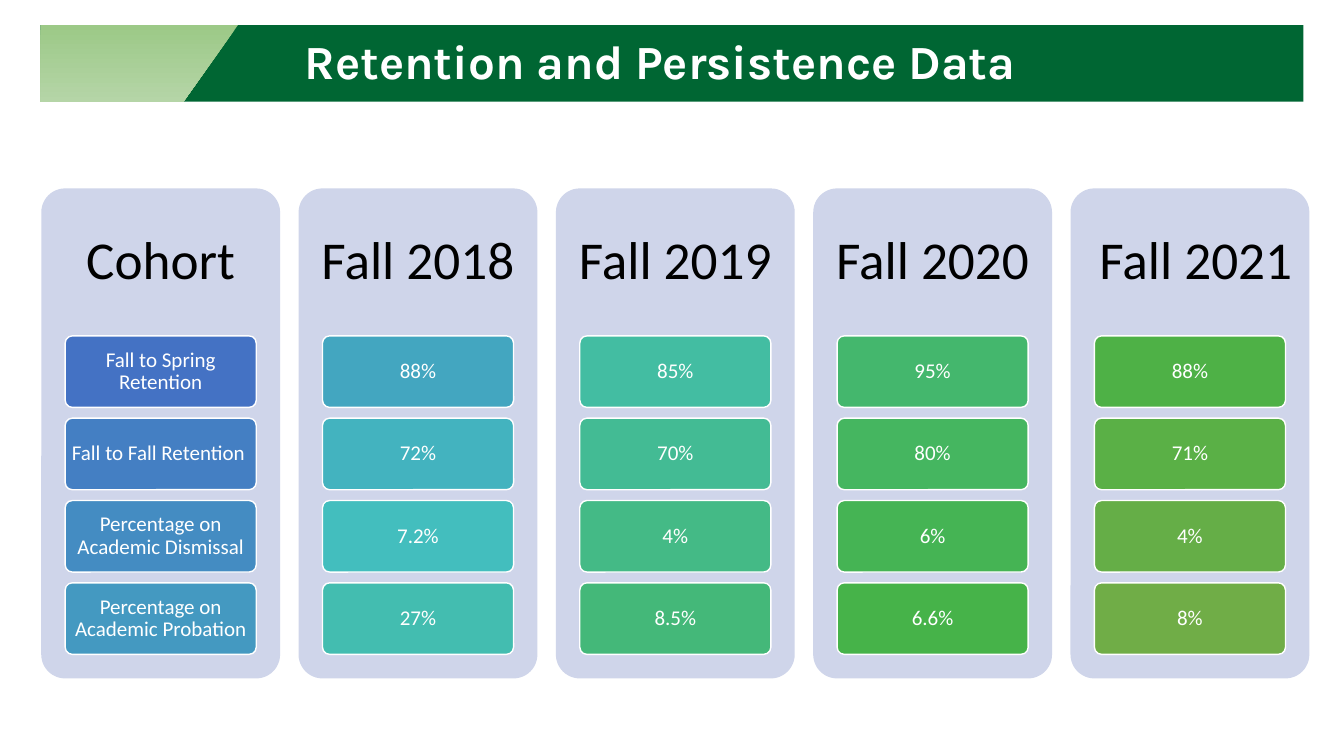
"""Build the retention and persistence slide with one panel per cohort."""
from colorsys import hls_to_rgb, rgb_to_hls

from pptx import Presentation
from pptx.dml.color import RGBColor
from pptx.enum.shapes import MSO_SHAPE as Preset
from pptx.enum.text import MSO_ANCHOR as Anchor, PP_ALIGN as Align
from pptx.util import Pt

WHITE = RGBColor(0xFF, 0xFF, 0xFF)
BLACK = RGBColor(0x00, 0x00, 0x00)
BAND_GREEN = RGBColor(0x00, 0x66, 0x33)
CORNER_TOP = RGBColor(0x9C, 0xC9, 0x87)
CORNER_BOTTOM = RGBColor(0xB5, 0xD5, 0xA7)
PANEL = RGBColor(0xCF, 0xD5, 0xEA)
FIRST_CELL = RGBColor(0x44, 0x72, 0xC4)
LAST_CELL = RGBColor(0x70, 0xAD, 0x47)

COHORTS = [
    ("Cohort", ["Fall to Spring Retention", "Fall to Fall Retention ",
                "Percentage on Academic Dismissal", "Percentage on Academic Probation"]),
    ("Fall 2018", ["88%", "72%", "7.2%", "27%"]),
    ("Fall 2019", ["85%", "70%", "4%", "8.5%"]),
    ("Fall 2020", ["95%", "80%", "6%", "6.6%"]),
    (" Fall 2021", ["88%", "71%", "4%", "8%"]),
]
ROWS = 4
PANEL_LEFT, PANEL_TOP, PANEL_WIDTH, PANEL_HEIGHT, PANEL_STEP = 29.5, 134.6, 170.6, 350, 183.8
CELL_TOP, CELL_WIDTH, CELL_HEIGHT, CELL_STEP = 239.9, 136.5, 51.1, 58.8
HEADER_HEIGHT = 105


def blend(share):
    """Return the cell colour at a share of the way along the hue range."""
    start, end = (rgb_to_hls(*(part / 255 for part in color)) for color in (FIRST_CELL, LAST_CELL))
    mixed = hls_to_rgb(*(a + (b - a) * share for a, b in zip(start, end)))
    return RGBColor(*(round(part * 255) for part in mixed))


class SlideBuilder:
    """Hold the text style and the current page."""

    font = "Calibri"

    def __init__(self, page):
        self.page = page

    def label(self, box, text, size, color, insets=(7.2, 3.6, 7.2, 3.6), **font):
        """Put one centred paragraph into a box."""
        frame = box.text_frame
        left, top, right, bottom = map(Pt, insets)
        layout = {"word_wrap": True, "vertical_anchor": Anchor.MIDDLE, "margin_left": left,
                  "margin_top": top, "margin_right": right, "margin_bottom": bottom}
        for name, value in layout.items():
            setattr(frame, name, value)
        para = frame.paragraphs[0]
        para.alignment, para.line_spacing = Align.CENTER, 0.9
        span = para.add_run()
        span.text = text
        span.font.color.rgb = color
        for name, value in {"name": self.font, "size": Pt(size), **font}.items():
            setattr(span.font, name, value)

    def block(self, preset, bounds, fill, outline=None):
        """Add a filled preset shape."""
        shape = self.page.shapes.add_shape(preset, *map(Pt, bounds))
        shape.shadow.inherit = False
        shape.fill.solid()
        shape.fill.fore_color.rgb = fill
        if outline is None:
            shape.line.fill.background()
        else:
            shape.line.color.rgb = outline
            shape.line.width = Pt(1)
        if preset == Preset.ROUNDED_RECTANGLE:
            shape.adjustments[0] = 0.1
        return shape

    def corner(self, points):
        """Add the gradient outline at the left of the band."""
        start, *others = [(Pt(x), Pt(y)) for x, y in points]
        outline = self.page.shapes.build_freeform(*start)
        outline.add_line_segments(others)
        shape = outline.convert_to_shape()
        shape.shadow.inherit = False
        shape.line.fill.background()
        shape.fill.gradient()
        shape.fill.gradient_angle = 270
        for stop, color in zip(shape.fill.gradient_stops, (CORNER_TOP, CORNER_BOTTOM)):
            stop.color.rgb = color

    def title(self, text, bounds):
        """Place the title in front of the green band."""
        box = self.page.shapes.title
        band = self.block(Preset.RECTANGLE, (28.8, 18, 902.2, 54.7), BAND_GREEN)
        box.element.addprevious(band.element)
        for name, value in zip(("left", "top", "width", "height"), bounds):
            setattr(box, name, Pt(value))
        self.label(box, text, 34, WHITE, name="Karla", bold=True)

    def panel(self, left, heading):
        """Add a cohort panel with its heading."""
        box = self.block(Preset.ROUNDED_RECTANGLE, (left, PANEL_TOP, PANEL_WIDTH, PANEL_HEIGHT), PANEL)
        self.label(box, heading, 38, BLACK, (5, 0, 5, PANEL_HEIGHT - HEADER_HEIGHT))

    def cell(self, left, top, text, fill):
        """Add one value cell."""
        box = self.block(Preset.ROUNDED_RECTANGLE, (left, top, CELL_WIDTH, CELL_HEIGHT), fill, WHITE)
        self.label(box, text, 15, WHITE, (2.9, 2.2, 2.9, 2.2))


def main():
    """Build and save the deck."""
    deck = Presentation()
    deck.slide_width, deck.slide_height = Pt(960), Pt(540)
    builder = SlideBuilder(deck.slides.add_slide(deck.slide_layouts[5]))
    builder.title("Retention and Persistence Data", (57.6, 25.2, 828, 41.8))
    builder.corner([(28.8, 18), (169.9, 18), (131, 72.7), (28.8, 72.7)])
    last = len(COHORTS) * ROWS - 1
    for column, (heading, values) in enumerate(COHORTS):
        left = PANEL_LEFT + column * PANEL_STEP
        builder.panel(left, heading)
        for row, value in enumerate(values):
            builder.cell(left + (PANEL_WIDTH - CELL_WIDTH) / 2, CELL_TOP + row * CELL_STEP,
                         value, blend((column * ROWS + row) / last))
    deck.save("out.pptx")


if __name__ == "__main__":
    main()
